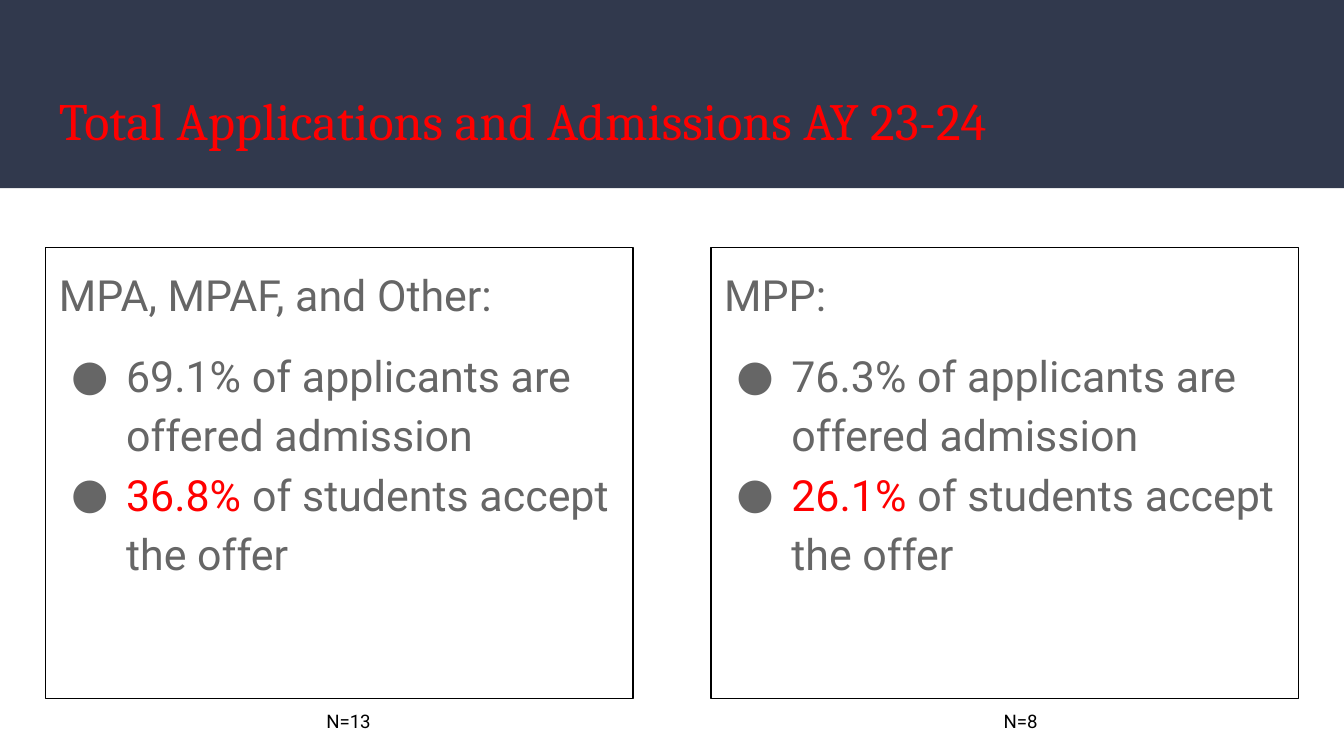
from dataclasses import dataclass

from lxml.etree import SubElement
from pptx import Presentation
from pptx.dml.color import RGBColor
from pptx.enum.shapes import MSO_SHAPE
from pptx.enum.text import MSO_ANCHOR, PP_ALIGN
from pptx.oxml.ns import qn
from pptx.util import Inches, Pt


@dataclass(frozen=True)
class Theme:
    band: str = "31394D"
    accent: str = "FF0000"
    body: str = "666666"
    ink: str = "000000"
    heading_font: str = "Cambria"
    body_font: str = "Roboto"
    title_size: int = 28
    body_size: int = 23
    caption_size: int = 10


THEME = Theme()
WIDTH = 10
HEIGHT = WIDTH * 9 / 16
MARGIN = 0.34
PANEL_WIDTH, PANEL_HEIGHT, PANEL_TOP = 4.37, 3.36, 1.84
INSET = 0.1

PANELS = [
    ("MPA, MPAF, and Other:", "69.1%", "36.8%", "N=13", 1.99),
    ("MPP:", "76.3%", "26.1%", "N=8", 2.08),
]


def format_run(run, font, size, color):
    run.font.name = font
    run.font.size = Pt(size)
    run.font.color.rgb = RGBColor.from_string(color)


def prepare_frame(shape, anchor=MSO_ANCHOR.TOP):
    frame = shape.text_frame
    frame.word_wrap = True
    frame.vertical_anchor = anchor
    frame.margin_left = frame.margin_right = Inches(INSET)
    frame.margin_top = frame.margin_bottom = Inches(INSET)
    return frame


def add_label(slide, box, text, font, size, color, anchor=MSO_ANCHOR.TOP):
    label = slide.shapes.add_textbox(*map(Inches, box))
    frame = prepare_frame(label, anchor)
    frame.text = text
    format_run(frame.paragraphs[0].runs[0], font, size, color)


def add_rectangle(slide, box):
    rectangle = slide.shapes.add_shape(MSO_SHAPE.RECTANGLE, *map(Inches, box))
    rectangle.shadow.inherit = False
    return rectangle


def fill_paragraph(paragraph, parts):
    paragraph.alignment = PP_ALIGN.LEFT
    paragraph.line_spacing = 1.15
    for text, color in parts:
        run = paragraph.add_run()
        run.text = text
        format_run(run, THEME.body_font, THEME.body_size, color)


def add_bullet(paragraph):
    properties = paragraph._p.get_or_add_pPr()
    properties.set("marL", str(Inches(0.5)))
    properties.set("indent", str(Inches(-0.41)))
    bullet_color = SubElement(properties, qn("a:buClr"))
    SubElement(bullet_color, qn("a:srgbClr"), val=THEME.body)
    SubElement(properties, qn("a:buFont"), typeface=THEME.body_font)
    SubElement(properties, qn("a:buChar"), char="●")


def add_header(slide, box, title):
    left, top, width, height = box
    band = add_rectangle(slide, box)
    band.fill.solid()
    band.fill.fore_color.rgb = RGBColor.from_string(THEME.band)
    band.line.fill.background()
    title_box = (left + MARGIN, top + 0.55, width - 2 * MARGIN, 0.68)
    add_label(slide, title_box, title, THEME.heading_font,
              THEME.title_size, THEME.accent, MSO_ANCHOR.MIDDLE)


def add_panel(slide, box, programs, offered, accepted, sample, sample_offset):
    left, top, width, height = box
    panel = add_rectangle(slide, box)
    panel.fill.background()
    panel.line.color.rgb = RGBColor.from_string(THEME.ink)
    panel.line.width = Pt(0.75)

    frame = prepare_frame(panel)
    fill_paragraph(frame.paragraphs[0], [(programs, THEME.body)])
    findings = [
        (12, [(f"{offered} of applicants are offered admission", THEME.body)]),
        (0, [(accepted, THEME.accent),
             (" of students accept the offer", THEME.body)]),
    ]
    for space_before, parts in findings:
        finding = frame.add_paragraph()
        fill_paragraph(finding, parts)
        finding.space_before = Pt(space_before)
        add_bullet(finding)

    add_label(slide, (left + sample_offset, top + height, 0.56, 0.37), sample,
              THEME.body_font, THEME.caption_size, THEME.ink)


def main():
    presentation = Presentation()
    presentation.slide_width = Inches(WIDTH)
    presentation.slide_height = Inches(HEIGHT)
    slide = presentation.slides.add_slide(presentation.slide_layouts[6])

    add_header(slide, (0, 0, WIDTH, 1.4),
               "Total Applications and Admissions AY 23-24")
    panel_step = WIDTH - 2 * MARGIN - PANEL_WIDTH
    for column, content in enumerate(PANELS):
        box = (MARGIN + column * panel_step, PANEL_TOP,
               PANEL_WIDTH, PANEL_HEIGHT)
        add_panel(slide, box, *content)

    presentation.save("out.pptx")


if __name__ == "__main__":
    main()
